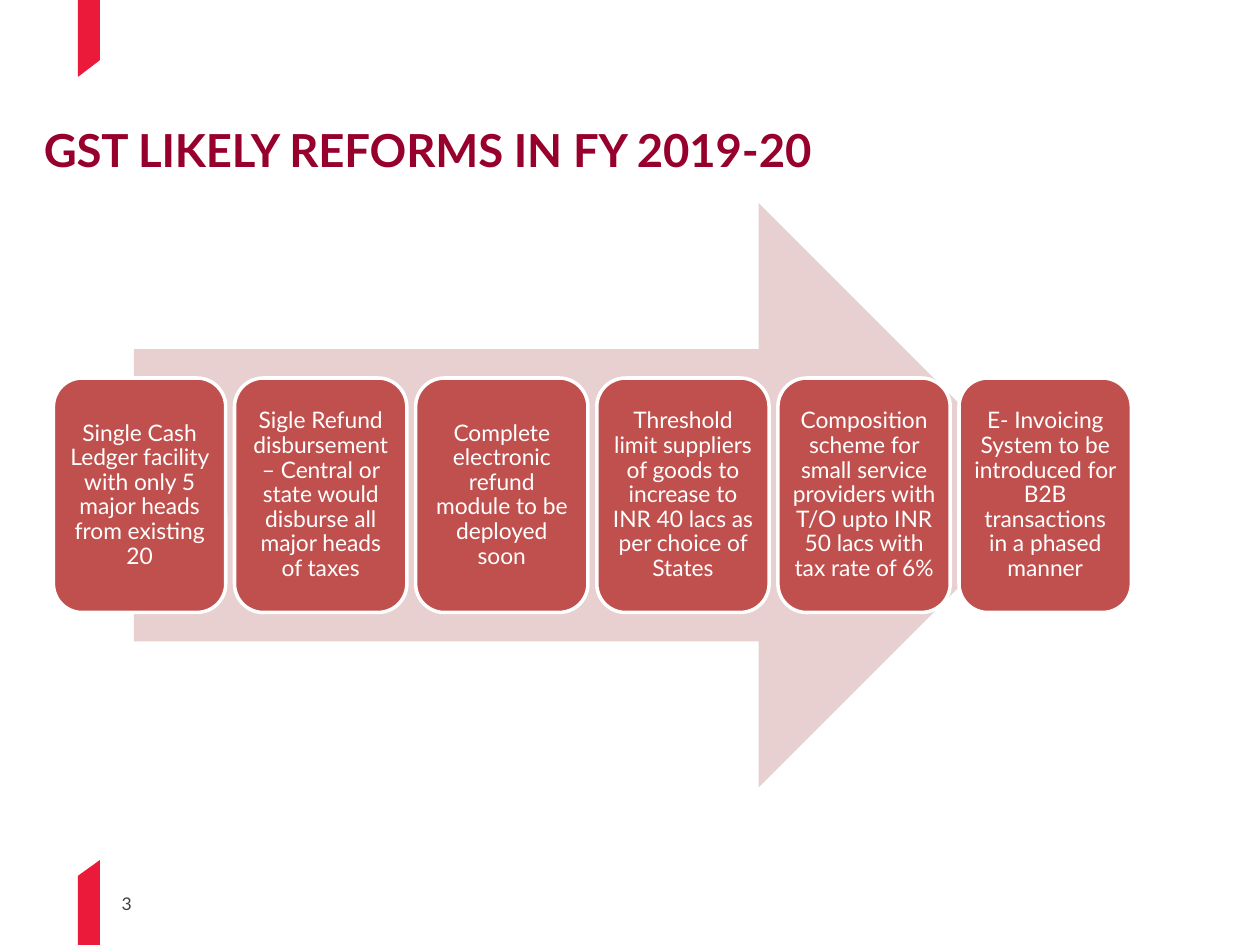
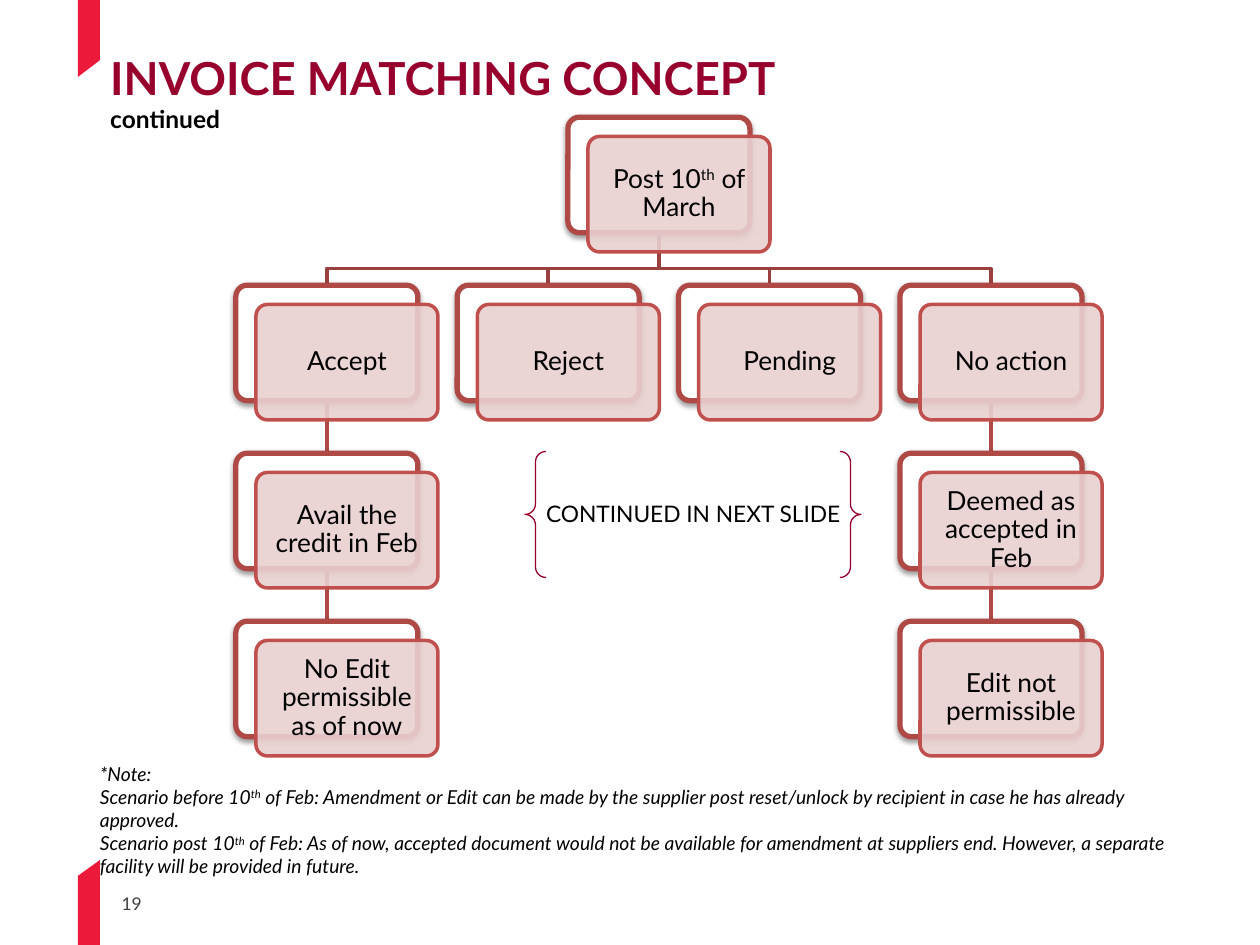
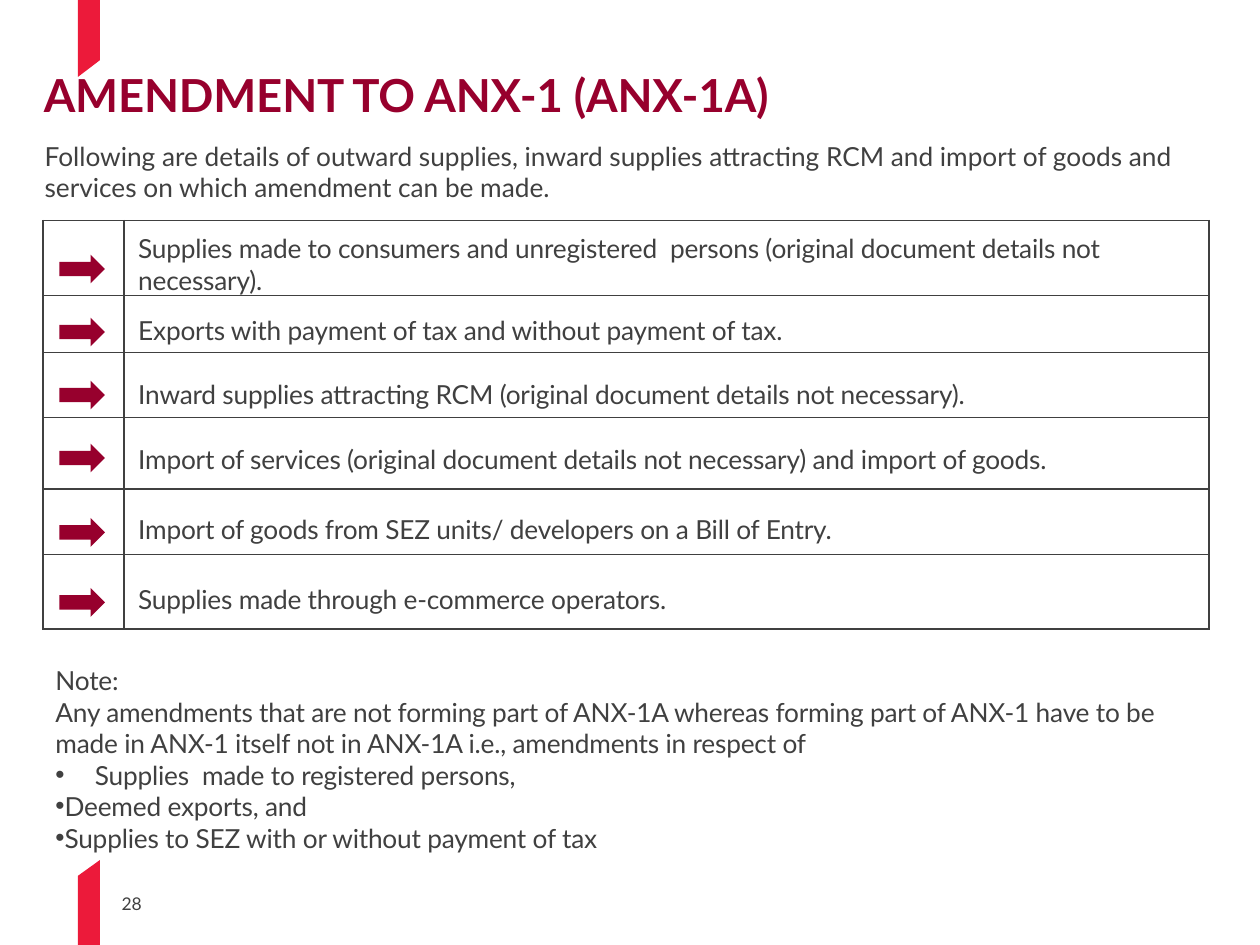
from dataclasses import dataclass

from lxml import etree
from pptx import Presentation
from pptx.dml.color import RGBColor
from pptx.enum import shapes as kinds, text as txt
from pptx.oxml.ns import qn
from pptx.util import Pt


@dataclass(frozen=True)
class Theme:
    font: str = "Lato"
    title: str = "97002D"
    ribbon: str = "EC1A3A"
    ink: str = "404040"
    black: str = "000000"
    white: str = "FFFFFF"
    red: str = "C0504D"
    pale: str = "E8D0D0"
    card_edge: str = "AE4946"
    branch: str = "9A403E"
    title_size: float = 26
    text_size: float = 15
    subtitle_size: float = 14
    step_size: float = 13
    note_size: float = 11
    number_size: float = 10


T = Theme()
LEFT, CENTER = txt.PP_ALIGN.LEFT, txt.PP_ALIGN.CENTER
TOP, MIDDLE, BOTTOM = txt.MSO_ANCHOR.TOP, txt.MSO_ANCHOR.MIDDLE, txt.MSO_ANCHOR.BOTTOM
KIND = kinds.MSO_SHAPE

# Content: text between carets is superscript, \v breaks a title line
REFORMS_TITLE = "GST LIKELY REFORMS IN FY 2019-20"
REFORMS = [
    "Single Cash Ledger facility with only 5 major heads from existing 20",
    "Sigle Refund disbursement – Central or state would disburse all major heads of taxes",
    "Complete electronic refund module to be deployed soon",
    "Threshold limit suppliers of goods to increase to INR 40 lacs as per choice of States",
    "Composition scheme for small service providers with T/O upto INR 50 lacs with tax rate of 6%",
    "E- Invoicing System to be introduced for B2B transactions in a phased manner",
]

MATCHING_TITLE = "INVOICE MATCHING CONCEPT\vcontinued"
MATCHING_ROOT = "Post 10^th^ of March"
MATCHING_BRANCHES = [
    ["Accept", "Avail the credit in Feb", "No Edit permissible as of now"],
    ["Reject"],
    ["Pending"],
    ["No action", "Deemed as accepted in Feb", "Edit not permissible"],
]
MATCHING_NEXT = "CONTINUED IN NEXT SLIDE"
MATCHING_NOTE = [
    "*Note:",
    "Scenario before 10^th^ of Feb: Amendment or Edit can be made by the supplier post "
    "reset/unlock by recipient in case he has already approved.",
    "Scenario post 10^th^ of Feb: As of now, accepted document would not be available for "
    "amendment at suppliers end. However, a separate facility will be provided in future.",
]

AMENDMENT_TITLE = "AMENDMENT TO ANX-1 (ANX-1A)"
AMENDMENT_INTRO = ("Following are details of outward supplies, inward supplies attracting RCM and "
                   "import of goods and services on which amendment can be made.")
AMENDMENTS = [  # text, row height, space above, anchor, arrow top
    ("Supplies made to consumers and unregistered  persons (original document details not necessary).",
     42, 7, BOTTOM, 145.5),
    ("Exports with payment of tax and without payment of tax.", 32.5, 7, MIDDLE, 181.5),
    ("Inward supplies attracting RCM (original document details not necessary).",
     37, 11, MIDDLE, 217.5),
    ("Import of services (original document details not necessary) and import of goods.",
     41, 7, MIDDLE, 253.5),
    ("Import of goods from SEZ units/ developers on a Bill of Entry.", 37.5, 9, MIDDLE, 296),
    ("Supplies made through e-commerce operators.", 42.5, 9, MIDDLE, 336),
]
AMENDMENT_NOTE = [  # text, bullet indents (left, first line) or None
    ("Note:", None),
    ("Any amendments that are not forming part of ANX-1A whereas forming part of ANX-1 have to "
     "be made in ANX-1 itself not in ANX-1A i.e., amendments in respect of", None),
    ("Supplies  made to registered persons,", (22.5, -22.5)),
    ("Deemed exports, and", (0, -22.5)),
    ("Supplies to SEZ with or without payment of tax", (0, -22.5)),
]


# Text helpers
def color(value):
    return RGBColor.from_string(value)


def style(run, size, ink, bold=False, italic=False, spacing=0):
    font = run.font
    font.name, font.size, font.bold, font.italic = T.font, Pt(size), bold, italic
    font.color.rgb = color(ink)
    if spacing:
        run._r.get_or_add_rPr().set("spc", str(spacing))


def write(paragraph, content, size, ink, align=LEFT, line_spacing=1.0, **look):
    for i, part in enumerate(content.split("^")):
        run = paragraph.add_run()
        run.text = part
        style(run, size, ink, **look)
        if i % 2:
            run._r.get_or_add_rPr().set("baseline", "30000")
    paragraph.alignment, paragraph.line_spacing = align, line_spacing
    paragraph.space_before = Pt(0)


def frame_of(shape, margins=(7.2, 3.6, 7.2, 3.6), anchor=TOP):
    frame = shape.text_frame
    frame.word_wrap, frame.auto_size = True, txt.MSO_AUTO_SIZE.NONE
    frame.vertical_anchor = anchor
    (frame.margin_left, frame.margin_top,
     frame.margin_right, frame.margin_bottom) = map(Pt, margins)
    return frame


def paragraphs(frame, count):
    return [frame.paragraphs[0]] + [frame.add_paragraph() for _ in range(count - 1)]


def text_box(slide, box, lines, size, ink, margins=(7.2, 3.6, 7.2, 3.6), **look):
    frame = frame_of(slide.shapes.add_textbox(*map(Pt, box)), margins)
    for paragraph, line in zip(paragraphs(frame, len(lines)), lines):
        write(paragraph, line, size, ink, **look)


# Shape helpers
def paint(shape, fill=None, line=None, width=1):
    shape.shadow.inherit = False
    if fill:
        shape.fill.solid()
        shape.fill.fore_color.rgb = color(fill)
    else:
        shape.fill.background()
    if line:
        shape.line.color.rgb = color(line)
        shape.line.width = Pt(width)
    else:
        shape.line.fill.background()
    return shape


def add(slide, kind, box, **look):
    return paint(slide.shapes.add_shape(kind, *map(Pt, box)), **look)


def outline(slide, points, close, **look):
    start, *rest = [(Pt(x), Pt(y)) for x, y in points]
    builder = slide.shapes.build_freeform(*start)
    builder.add_line_segments(rest, close=close)
    return paint(builder.convert_to_shape(), **look)


def straight(slide, x, top, bottom, ink, width):
    line = slide.shapes.add_connector(kinds.MSO_CONNECTOR.STRAIGHT, Pt(x), Pt(top), Pt(x), Pt(bottom))
    line.line.color.rgb, line.line.width = color(ink), Pt(width)
    etree.SubElement(line._element.spPr, qn("a:effectLst"))


# Shared frame: ribbons, title and slide number
def new_slide(prs, layout, title, title_box, number, spacing=0):
    slide = prs.slides.add_slide(prs.slide_layouts[layout])
    left, right = 44.5, 57
    for edge, tip, shoulder in ((0, 44, 34.5), (540, 500.5, 491.5)):
        outline(slide, [(right, edge), (left, edge), (left, tip), (right, shoulder)], True, fill=T.ribbon)

    heading = slide.shapes.title
    heading.left, heading.top, heading.width, heading.height = map(Pt, title_box)
    frame = frame_of(heading, (1, 1, 0, 0))
    frame.text = title
    frame.paragraphs[0].alignment = LEFT
    first, *subtitle = frame.paragraphs[0].runs
    style(first, T.title_size, T.title, bold=True, spacing=spacing)
    for run in subtitle:
        style(run, T.subtitle_size, T.black, bold=True)

    text_box(slide, (67.5, 510.5, 20, 14), [number], T.number_size, T.ink, margins=(2, 0, 0, 0))
    return slide


# Likely reforms: steps in a row over an arrow
def reforms_slide(prs):
    slide = new_slide(prs, 5, REFORMS_TITLE, (24, 69, 564, 32.5), "3", spacing=-10)
    add(slide, KIND.RIGHT_ARROW, (76.5, 116, 524, 334), fill=T.pale)
    for i, reform in enumerate(REFORMS):
        step = add(slide, KIND.ROUNDED_RECTANGLE, (30.5 + 103.5 * i, 216, 98.5, 134),
                   fill=T.red, line=T.white, width=2)
        frame = frame_of(step, (3.6,) * 4, MIDDLE)
        write(frame.paragraphs[0], reform, T.step_size, T.white, CENTER, 0.9)


# Invoice matching: tree of double cards
CARD_W, CARD_H = 104, 66


def card_place(column, row):
    return 134.75 + 126.5 * column, 67 + 96 * row


def add_card(slide, label, column, row):
    x, y = card_place(column, row)
    back = add(slide, KIND.ROUNDED_RECTANGLE, (x, y, CARD_W, CARD_H),
               fill=T.white, line=T.card_edge, width=3)
    effects = back._element.spPr.find(qn("a:effectLst"))
    shadow = etree.SubElement(effects, qn("a:outerShdw"), blurRad=str(Pt(3.1)), dist=str(Pt(1.6)),
                              dir="5400000", rotWithShape="0")
    tint = etree.SubElement(shadow, qn("a:srgbClr"), val=T.black)
    etree.SubElement(tint, qn("a:alpha"), val="38000")

    front = add(slide, KIND.ROUNDED_RECTANGLE, (x + 11.5, y + 11, CARD_W, CARD_H),
                fill=T.pale, line=T.red, width=2)
    glass = front._element.spPr.find(qn("a:solidFill")).find(qn("a:srgbClr"))
    etree.SubElement(glass, qn("a:alpha"), val="90000")
    for card in (back, front):
        card.adjustments[0] = 0.1
    write(frame_of(front, (4.2,) * 4, MIDDLE).paragraphs[0], label, T.text_size, T.black, CENTER, 0.9)


def matching_slide(prs):
    slide = new_slide(prs, 5, MATCHING_TITLE, (62, 27.5, 652, 50), "19")
    text_box(slide, (50, 432, 627, 74), MATCHING_NOTE, T.note_size, T.black, italic=True)

    middle = (len(MATCHING_BRANCHES) - 1) / 2
    root_x, root_y = card_place(middle, 0)
    stem = root_x + CARD_W / 2
    cards = [(MATCHING_ROOT, middle, 0)]
    for column, branch in enumerate(MATCHING_BRANCHES):
        for row, label in enumerate(branch, 1):
            x, y = card_place(column, row)
            x += CARD_W / 2
            if row == 1:
                bus = y - 9.5
                outline(slide, [(stem, root_y + CARD_H), (stem, bus), (x, bus), (x, y)], False,
                        line=T.branch, width=2)
            else:
                straight(slide, x, y - 30, y, T.card_edge, 2)
            cards.append((label, column, row))
    for card in cards:
        add_card(slide, *card)

    text_box(slide, (294, 282, 204, 45), [MATCHING_NEXT], T.step_size, T.black, align=CENTER)
    add(slide, KIND.DOUBLE_BRACE, (300, 258, 192, 72), line=T.title, width=0.75)


# Amendment: ruled table with arrows, then a note
def rule_cell(cell):
    props = cell._tc.get_or_add_tcPr()
    for side in ("lnL", "lnR", "lnT", "lnB"):
        border = etree.SubElement(props, qn("a:" + side), w=str(Pt(1)))
        ink = etree.SubElement(border, qn("a:solidFill"))
        etree.SubElement(ink, qn("a:srgbClr"), val=T.ink)
    cell.fill.background()


def amendment_slide(prs):
    slide = new_slide(prs, 1, AMENDMENT_TITLE, (24, 37.5, 564, 32.5), "28", spacing=-10)
    text_box(slide, (24.5, 72, 669, 45), [AMENDMENT_INTRO], T.text_size, T.ink, margins=(1, 8, 0, 0))

    widths = (46.5, 620)
    height = sum(row[1] for row in AMENDMENTS)
    table = slide.shapes.add_table(len(AMENDMENTS), len(widths), Pt(24.5), Pt(126),
                                   Pt(sum(widths)), Pt(height)).table
    table.first_row = table.horz_banding = False
    for column, width in zip(table.columns, widths):
        column.width = Pt(width)
    for row, (label, row_height, above, anchor, arrow_top) in zip(table.rows, AMENDMENTS):
        row.height = Pt(row_height)
        for cell in row.cells:
            rule_cell(cell)
        cell = row.cells[1]
        cell.margin_left, cell.margin_top = Pt(8), Pt(above)
        cell.margin_right = cell.margin_bottom = Pt(0)
        cell.vertical_anchor = anchor
        write(cell.text_frame.paragraphs[0], label, T.text_size, T.ink, spacing=-10)
        add(slide, KIND.RIGHT_ARROW, (34, arrow_top, 26, 16.5), fill=T.title)

    note = slide.placeholders[1]
    note.left, note.top, note.width, note.height = map(Pt, (24.5, 376, 667, 117))
    frame = frame_of(note)
    for paragraph, (line, bullet) in zip(paragraphs(frame, len(AMENDMENT_NOTE)), AMENDMENT_NOTE):
        props = paragraph._p.get_or_add_pPr()
        left, first = bullet or (0, 0)
        props.set("marL", str(Pt(left)))
        props.set("indent", str(Pt(first)))
        if bullet:
            etree.SubElement(props, qn("a:buChar"), char="•")
        else:
            etree.SubElement(props, qn("a:buNone"))
        write(paragraph, line, T.text_size, T.ink, spacing=-10)


def main():
    prs = Presentation()
    prs.slide_width, prs.slide_height = Pt(720), Pt(540)
    reforms_slide(prs)
    matching_slide(prs)
    amendment_slide(prs)
    prs.save("out.pptx")


if __name__ == "__main__":
    main()
